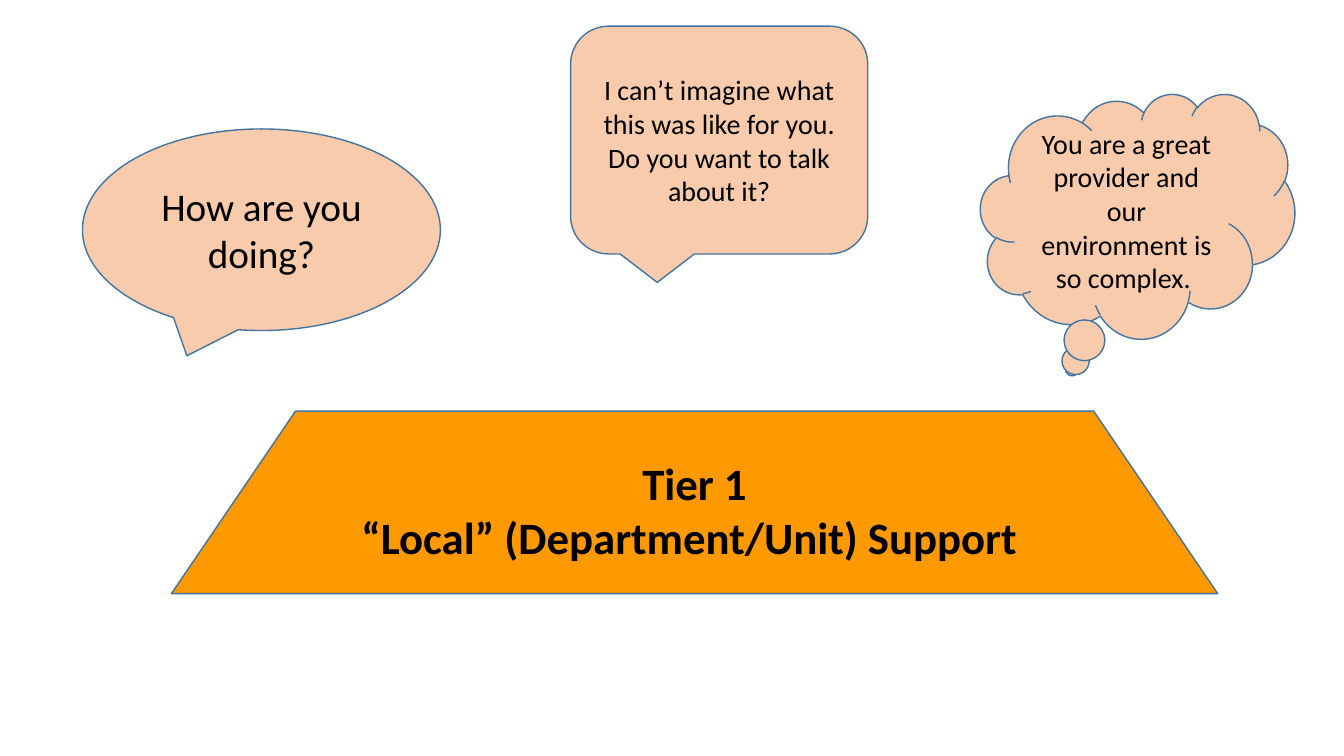
from pptx import Presentation
from pptx.dml.color import RGBColor
from pptx.enum.shapes import MSO_SHAPE as SHAPE
from pptx.enum.text import MSO_ANCHOR as ANCHOR, PP_ALIGN as ALIGN
from pptx.util import Cm, Pt


def rgb(value):
    return RGBColor.from_string(value)


prs = Presentation()
prs.slide_width, prs.slide_height = Cm(33.87), Cm(19.05)
s = prs.slides.add_slide(prs.slide_layouts[6])

# Tier base and the speech bubbles above it: shape, box in cm, fill, font, lines
ORANGE, PEACH = "FF9900", "F8CBAD"
parts = [
    (SHAPE.TRAPEZOID, (4.32, 10.36, 26.37, 4.6), ORANGE, {"size": Pt(32), "bold": True},
     ["Tier 1", "“Local” (Department/Unit) Support "]),
    (SHAPE.OVAL_CALLOUT, (2.08, 3.25, 9.02, 5.08), PEACH, {"size": Pt(28)},
     ["How are you doing?"]),
    (SHAPE.ROUNDED_RECTANGULAR_CALLOUT, (14.38, 0.66, 7.49, 5.74), PEACH, {"size": Pt(20)},
     ["I can’t imagine what this was like for you. Do you want to talk about it?"]),
    (SHAPE.CLOUD_CALLOUT, (24.71, 2.36, 7.92, 6.17), PEACH, {"size": Pt(20)},
     ["You are a great provider and our environment is so complex. "]),
]

for kind, box, fill, font, lines in parts:
    sp = s.shapes.add_shape(kind, *map(Cm, box))
    sp.shadow.inherit = False
    sp.fill.solid()
    sp.fill.fore_color.rgb = rgb(fill)
    sp.line.color.rgb = rgb("43739E")
    sp.line.width = Pt(1)
    if kind == SHAPE.TRAPEZOID:
        sp.adjustments[0] = 0.68

    # Centred text
    tf = sp.text_frame
    tf.word_wrap = True
    tf.vertical_anchor = ANCHOR.MIDDLE
    for i, line in enumerate(lines):
        p = tf.add_paragraph() if i else tf.paragraphs[0]
        p.alignment = ALIGN.CENTER
        r = p.add_run()
        r.text = line
        r.font.color.rgb = rgb("000000")
        for name, value in {"name": "Calibri", **font}.items():
            setattr(r.font, name, value)

prs.save("out.pptx")
